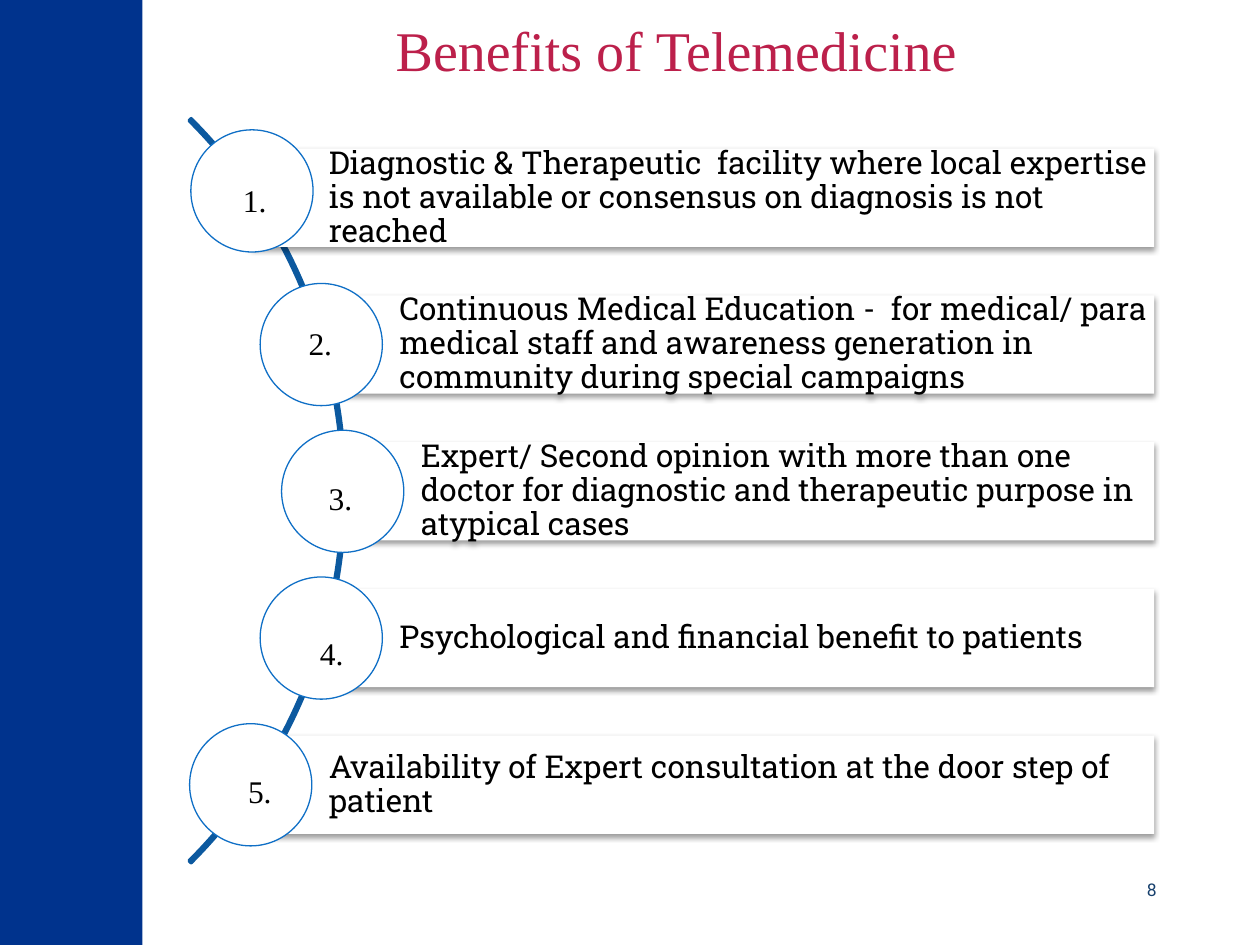
import pptx
import pptx.dml.color
import pptx.enum.shapes
import pptx.enum.text
import pptx.oxml
import pptx.oxml.ns
import pptx.util

RGBColor = pptx.dml.color.RGBColor
MSO_SHAPE = pptx.enum.shapes.MSO_SHAPE
ANCHOR = pptx.enum.text.MSO_ANCHOR
ALIGN = pptx.enum.text.PP_ALIGN

NAVY = RGBColor(0x00, 0x33, 0x8D)
ARC_BLUE = RGBColor(0x0C, 0x59, 0x9F)
RING_BLUE = RGBColor(0x0F, 0x6F, 0xC6)
PAGE_BLUE = RGBColor(0x17, 0x40, 0x6D)
CRIMSON = RGBColor(0xBC, 0x20, 0x4B)
WHITE = RGBColor(0xFF, 0xFF, 0xFF)
BLACK = RGBColor(0x00, 0x00, 0x00)

SHADOW_XML = (
    f'<a:outerShdw {pptx.oxml.ns.nsdecls("a")} blurRad="39370" dist="20320" dir="5400000"'
    ' rotWithShape="0"><a:srgbClr val="000000"><a:alpha val="38000"/></a:srgbClr></a:outerShdw>'
)

presentation = pptx.Presentation()
presentation.slide_width = pptx.util.Inches(10)
presentation.slide_height = pptx.util.Inches(7.5)
slide = presentation.slides.add_slide(presentation.slide_layouts[6])


def add_box(left, top, width, height, kind=None, fill=None, line=None, line_width=0.75):
    """Add a preset shape, or a text box if no kind is given; lengths are percent of the slide."""
    across, down = presentation.slide_width / 100, presentation.slide_height / 100
    box = [int(left * across), int(top * down), int(width * across), int(height * down)]
    if kind is None:
        return slide.shapes.add_textbox(*box)
    shape = slide.shapes.add_shape(kind, *box)
    shape.shadow.inherit = False
    if fill is None:
        shape.fill.background()
    else:
        shape.fill.solid()
        shape.fill.fore_color.rgb = fill
    if line is None:
        shape.line.fill.background()
    else:
        shape.line.color.rgb = line
        shape.line.width = pptx.util.Pt(line_width)
    return shape


def write(shape, text, font, size, color, align=ALIGN.LEFT, anchor=ANCHOR.TOP,
          spacing=1.0, margins=(0, 0, 0, 0)):
    """Fill a shape with one paragraph; margins are left, top, right, bottom in inches."""
    frame = shape.text_frame
    frame.text = text
    frame.word_wrap = True
    frame.vertical_anchor = anchor
    (frame.margin_left, frame.margin_top,
     frame.margin_right, frame.margin_bottom) = map(pptx.util.Inches, margins)
    paragraph = frame.paragraphs[0]
    paragraph.alignment = align
    paragraph.line_spacing = spacing
    run_font = paragraph.runs[0].font
    run_font.name = font
    run_font.size = pptx.util.Pt(size)
    run_font.color.rgb = color


# Side band, page number and connecting arc
add_box(0, 0, 11.3, 100, MSO_SHAPE.RECTANGLE, NAVY)
write(add_box(78.7, 93.07, 13.1, 2.13), "8", "Roboto", 10, PAGE_BLUE,
      ALIGN.RIGHT, ANCHOR.BOTTOM)
arc = add_box(-56.1, -3.73, 83.5, 111.33, MSO_SHAPE.BLOCK_ARC, line=ARC_BLUE, line_width=2)
for index, value in enumerate((189, 27, 0.0026)):
    arc.adjustments[index] = value

# Each row: bar left, circle shift (across, down), number position, text
FIRST_CENTRE, ROW_PITCH = 20.93, 15.53
BAR_RIGHT, BAR_HEIGHT = 91.6, 10.4
CIRCLE_WIDTH, CIRCLE_HEIGHT = 9.7, 12.93
benefits = [
    (19.9, (0.1, -0.73), (18.3, 18.53),
     "Diagnostic & Therapeutic  facility where local expertise is not available "
     "or consensus on diagnosis is not reached"),
    (25.5, (0, 0), (23.5, 33.6),
     "Continuous Medical Education -  for medical/ para medical staff and awareness "
     "generation in community during special campaigns"),
    (27.2, (0, 0), (25.1, 50),
     "Expert/ Second opinion with more than one doctor for diagnostic and "
     "therapeutic purpose in atypical cases"),
    (25.5, (0, 0), (24.4, 66.4),
     "Psychological and financial benefit to patients"),
    (19.9, (0, 0), (18.7, 81.07),
     "Availability of Expert consultation at the door step of patient"),
]

for row, (bar_left, (shift_x, shift_y), number_at, benefit) in enumerate(benefits):
    centre = FIRST_CENTRE + row * ROW_PITCH
    bar = add_box(bar_left, centre - BAR_HEIGHT / 2, BAR_RIGHT - bar_left, BAR_HEIGHT,
                  MSO_SHAPE.RECTANGLE, WHITE)
    effects = bar._element.spPr.find(pptx.oxml.ns.qn("a:effectLst"))
    effects.append(pptx.oxml.parse_xml(SHADOW_XML))
    write(bar, benefit, "Roboto Slab", 18, BLACK, anchor=ANCHOR.MIDDLE,
          spacing=0.9, margins=(0.62, 0.05, 0.05, 0.05))
    add_box(bar_left - CIRCLE_WIDTH / 2 + shift_x, centre - CIRCLE_HEIGHT / 2 + shift_y,
            CIRCLE_WIDTH, CIRCLE_HEIGHT, MSO_SHAPE.OVAL, WHITE, RING_BLUE)
    write(add_box(*number_at, 4.2, 5.33), f"{row + 1}.", "Times New Roman", 18, BLACK,
          margins=(0.1, 0.05, 0.1, 0.05))

write(add_box(21.8, 3.6, 63.8, 7.07), "Benefits of Telemedicine", "Times New Roman", 32,
      CRIMSON, ALIGN.CENTER, spacing=0.7)

presentation.save("out.pptx")
